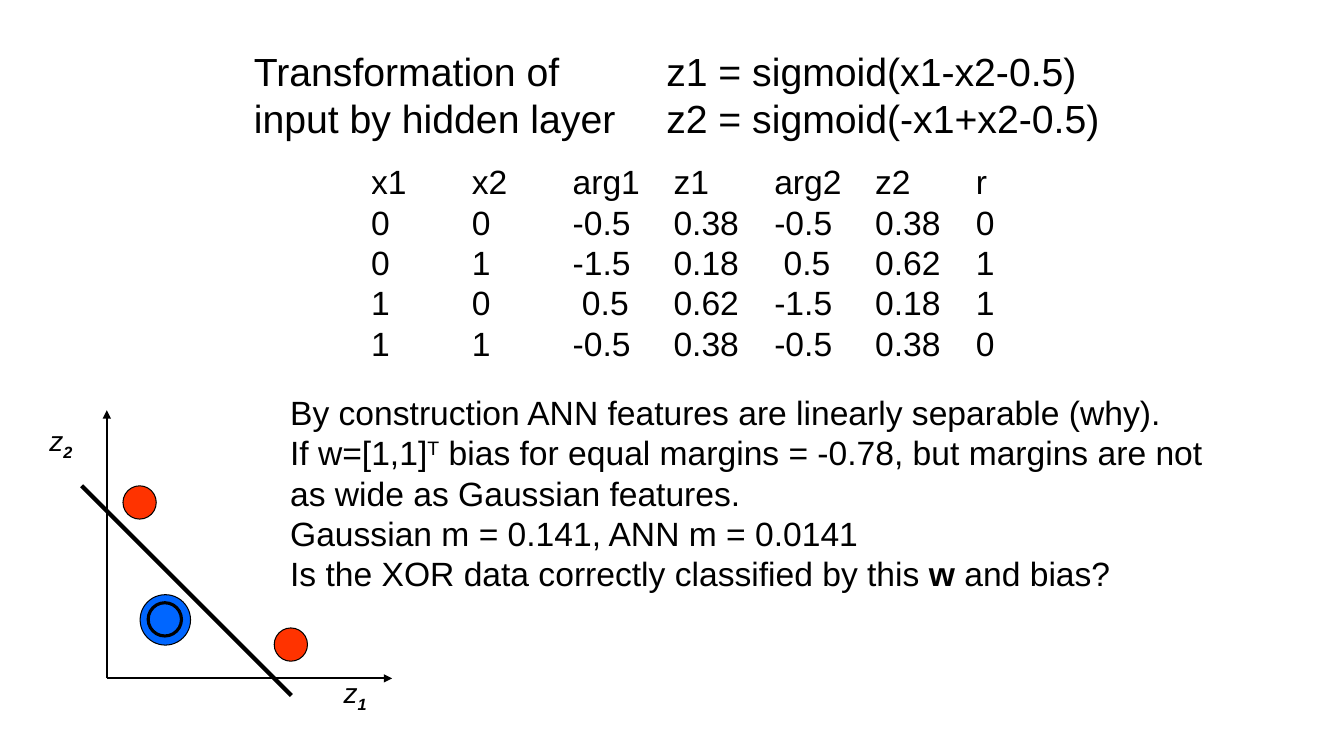
from dataclasses import dataclass

from lxml.etree import SubElement
from pptx import Presentation
from pptx.dml.color import RGBColor
from pptx.enum.shapes import MSO_CONNECTOR as Connector, MSO_SHAPE as Shape
from pptx.enum.text import MSO_AUTO_SIZE as AutoSize
from pptx.oxml.ns import qn
from pptx.util import Inches, Pt


@dataclass(frozen=True)
class Theme:
    font: str = "Arial"
    ink: str = "000000"
    red: str = "FF3300"
    blue: str = "0066FF"
    formula: int = 28
    body: int = 24
    label: int = 20


class SlideBuilder:
    def __init__(self, slide, theme):
        self.shapes = slide.shapes
        self.theme = theme

    def span(self, para, text, size, bold=False, italic=False, baseline=0):
        """Add one run; baseline is the raise (or drop) in percent."""
        span = para.add_run()
        span.text = text
        font = span.font
        font.name, font.size = self.theme.font, Pt(size)
        font.bold, font.italic = bold, italic
        font.color.rgb = RGBColor.from_string(self.theme.ink)
        if baseline:
            font._element.set("baseline", str(baseline * 1000))

    def text(self, left, top, width, height, lines, size, wrap=True):
        """Each line is a list of (text, run options) pairs."""
        box = self.shapes.add_textbox(*map(Inches, (left, top, width, height)))
        frame = box.text_frame
        frame.word_wrap = wrap
        frame.auto_size = AutoSize.SHAPE_TO_FIT_TEXT
        for index, line in enumerate(lines):
            para = frame.add_paragraph() if index else frame.paragraphs[0]
            for text, options in line:
                self.span(para, text, size, **options)

    def table(self, left, top, widths, row_height, rows):
        frame = self.shapes.add_table(
            len(rows), len(widths), Inches(left), Inches(top),
            Inches(sum(widths)), Inches(row_height * len(rows)))
        table = frame.table
        table.first_row = table.horz_banding = False
        for column, width in zip(table.columns, widths):
            column.width = Inches(width)
        for row, values in zip(table.rows, rows):
            row.height = Inches(row_height)
            for cell, value in zip(row.cells, values):
                cell.fill.background()
                cell.margin_left = cell.margin_right = 0
                cell.margin_top = cell.margin_bottom = 0
                self.span(cell.text_frame.paragraphs[0], value, self.theme.body)

    def line(self, start, end, weight, arrow=False):
        line = self.shapes.add_connector(
            Connector.STRAIGHT, *map(Inches, (*start, *end)))
        line.line.color.rgb = RGBColor.from_string(self.theme.ink)
        line.line.width = Pt(weight)
        if arrow:
            SubElement(line.line._get_or_add_ln(), qn("a:tailEnd"), type="triangle")
        SubElement(line._element.spPr, qn("a:effectLst"))

    def circle(self, left, top, diameter, fill=None, weight=0.75):
        circle = self.shapes.add_shape(
            Shape.OVAL, *map(Inches, (left, top, diameter, diameter)))
        circle.shadow.inherit = False
        if fill:
            circle.fill.solid()
            circle.fill.fore_color.rgb = RGBColor.from_string(fill)
        else:
            circle.fill.background()
        circle.line.color.rgb = RGBColor.from_string(self.theme.ink)
        circle.line.width = Pt(weight)


def plain(*lines):
    return [[(line, {})] for line in lines]


def add_formulas(page):
    size = page.theme.formula
    page.text(2.42, 0.42, 3.8, 1.03,
              plain("Transformation of", "input by hidden layer"), size, wrap=False)
    page.text(6.51, 0.42, 4.51, 1.03,
              plain("z1 = sigmoid(x1-x2-0.5)", "z2 = sigmoid(-x1+x2-0.5)"),
              size, wrap=False)


def add_xor_table(page):
    rows = [
        ("x1", "x2", "arg1", "z1", "arg2", "z2", "r"),
        ("0", "0", "-0.5", "0.38", "-0.5", "0.38", "0"),
        ("0", "1", "-1.5", "0.18", " 0.5", "0.62", "1"),
        ("1", "0", " 0.5", "0.62", "-1.5", "0.18", "1"),
        ("1", "1", "-0.5", "0.38", "-0.5", "0.38", "0"),
    ]
    page.table(3.68, 1.63, [1] * 6 + [0.35], 0.4, rows)


def add_feature_plot(page):
    theme = page.theme
    origin = (1.06, 6.73)
    for axis_end in ((3.89, 6.73), (1.06, 4.07)):
        page.line(origin, axis_end, 1.5, arrow=True)
    for left, top in ((1.22, 4.82), (2.72, 6.23)):
        page.circle(left, top, 0.33, theme.red)
    page.circle(1.39, 5.9, 0.5, theme.blue)
    page.circle(1.47, 5.98, 0.33, weight=2.25)
    for left, top, index in ((0.39, 4.15, "2"), (3.31, 6.65, "1")):
        label = [("z", {"italic": True}),
                 (index, {"italic": True, "bold": True, "baseline": -25})]
        page.text(left, top, 0.52, 0.43, [label], theme.label)
    page.line((0.81, 4.82), (2.89, 6.9), 3)


def add_discussion(page):
    lines = [
        [("By construction ANN features are linearly separable (why).", {})],
        [("If w=[1,1]", {}), ("T", {"baseline": 30}),
         (" bias for equal margins = -0.78, but margins are not as wide as "
          "Gaussian features.", {})],
        [("Gaussian m = 0.141, ANN m = 0.0141", {})],
        [("Is the XOR data correctly classified by this ", {}),
         ("w", {"bold": True}), (" and bias?", {})],
    ]
    page.text(2.78, 3.84, 9.5, 2.12, lines, page.theme.body)


def main():
    deck = Presentation()
    deck.slide_width, deck.slide_height = Inches(13.33), Inches(7.5)
    blank = deck.slide_layouts[6]
    page = SlideBuilder(deck.slides.add_slide(blank), Theme())
    add_formulas(page)
    add_xor_table(page)
    add_feature_plot(page)
    add_discussion(page)
    deck.save("out.pptx")


if __name__ == "__main__":
    main()
